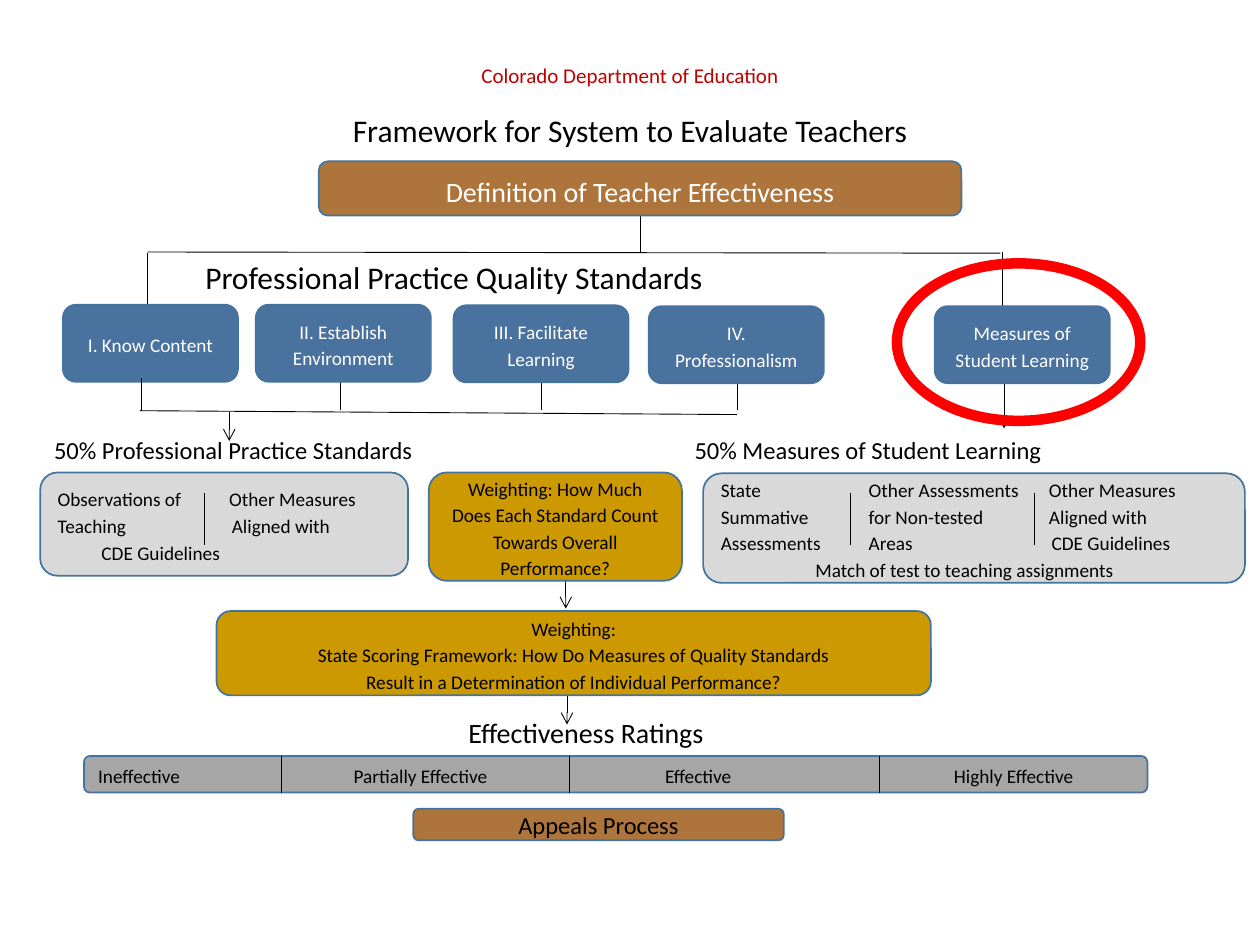
from dataclasses import dataclass

from lxml import etree
from pptx import Presentation
from pptx.dml.color import RGBColor
from pptx.enum.shapes import MSO_CONNECTOR, MSO_SHAPE
from pptx.enum.text import MSO_ANCHOR, MSO_AUTO_SIZE, PP_ALIGN
from pptx.oxml.ns import qn
from pptx.util import Pt

LEFT, CENTER = PP_ALIGN.LEFT, PP_ALIGN.CENTER
TOP, MIDDLE = MSO_ANCHOR.TOP, MSO_ANCHOR.MIDDLE
ROUNDED, ELLIPSE = MSO_SHAPE.ROUNDED_RECTANGLE, MSO_SHAPE.OVAL
STRAIGHT = MSO_CONNECTOR.STRAIGHT
NO_AUTOFIT = MSO_AUTO_SIZE.NONE

FONT = "Calibri"
BLACK, WHITE, RED, DARK_RED = "000000", "FFFFFF", "FF0000", "C00000"
BROWN, BLUE, GOLD = "AD743B", "4A729E", "CC9900"
LIGHT_GRAY, GRAY, OUTLINE = "D9D9D9", "A6A6A6", "43739E"


@dataclass
class Panel:
    """A rounded box; each line may carry its own tab stops."""
    left: float
    top: float
    width: float
    height: float
    fill: str
    lines: list[str]
    tabs: list[list[float]] | None = None
    size: float = 11
    color: str = BLACK
    align: PP_ALIGN = CENTER
    spacing: float = 1.15


@dataclass
class Link:
    x1: float
    y1: float
    x2: float
    y2: float
    arrow: bool = False


def rgb(value: str) -> RGBColor:
    return RGBColor.from_string(value)


def add_text(frame, text: str, *, size: float, color: str = BLACK,
             align: PP_ALIGN = LEFT, spacing: float = 1.0, after: float = 0,
             tabs: list[float] | None = None, new: bool = False) -> None:
    para = frame.add_paragraph() if new else frame.paragraphs[0]
    para.alignment = align
    para.line_spacing = spacing
    para.space_before = Pt(0)
    para.space_after = Pt(after)
    if tabs:
        stops = etree.SubElement(para._p.get_or_add_pPr(), qn("a:tabLst"))
        for stop in tabs:
            etree.SubElement(stops, qn("a:tab"), pos=str(int(Pt(stop))), algn="l")
    span = para.add_run()
    span.text = text
    span.font.name = FONT
    span.font.size = Pt(size)
    span.font.color.rgb = rgb(color)


def add_panel(slide, panel: Panel) -> None:
    box = slide.shapes.add_shape(ROUNDED, Pt(panel.left), Pt(panel.top),
                                 Pt(panel.width), Pt(panel.height))
    box.shadow.inherit = False
    box.fill.solid()
    box.fill.fore_color.rgb = rgb(panel.fill)
    box.line.color.rgb = rgb(OUTLINE)
    box.line.width = Pt(1)
    frame = box.text_frame
    frame.word_wrap = True
    frame.vertical_anchor = MIDDLE
    for index, line in enumerate(panel.lines):
        add_text(frame, line, size=panel.size, color=panel.color,
                 align=panel.align, spacing=panel.spacing,
                 tabs=panel.tabs[index] if panel.tabs else None, new=index > 0)


def add_link(slide, link: Link) -> None:
    line = slide.shapes.add_connector(STRAIGHT, Pt(link.x1), Pt(link.y1),
                                      Pt(link.x2), Pt(link.y2))
    line.line.color.rgb = rgb(BLACK)
    line.line.width = Pt(0.5)
    if link.arrow:
        etree.SubElement(line.line._get_or_add_ln(), qn("a:tailEnd"), type="arrow")
    etree.SubElement(line._element.spPr, qn("a:effectLst"))


def add_label(slide, text: str, left: float, top: float, width: float,
              height: float, size: float, tabs: list[float] | None = None) -> None:
    box = slide.shapes.add_textbox(Pt(left), Pt(top), Pt(width), Pt(height))
    box.text_frame.word_wrap = tabs is not None
    add_text(box.text_frame, text, size=size, tabs=tabs)


def add_heading(slide) -> None:
    title = slide.shapes.title
    title.left, title.top, title.width, title.height = Pt(180), Pt(30.2), Pt(360), Pt(59)
    frame = title.text_frame
    frame.word_wrap = True
    frame.auto_size = NO_AUTOFIT
    frame.vertical_anchor = TOP
    add_text(frame, "Colorado Department of Education", size=12, color=DARK_RED,
             align=CENTER, spacing=1.15, after=10)
    add_text(frame, "Framework for System to Evaluate Teachers", size=18,
             align=CENTER, spacing=1.15, new=True)


def add_highlight(slide) -> None:
    ring = slide.shapes.add_shape(ELLIPSE, Pt(512.6), Pt(150.5), Pt(139), Pt(90))
    ring.shadow.inherit = False
    ring.fill.background()
    ring.line.color.rgb = rgb(RED)
    ring.line.width = Pt(6)


TREE_LINKS = [
    Link(84.2, 144, 571.7, 144.7),
    Link(84.2, 144.7, 84.2, 193),
    Link(573.1, 144, 573.1, 190.8),
    Link(365.8, 123.1, 365.8, 144.7),
    Link(79.9, 234.7, 421.2, 236.9),
    *[Link(x, 215, x, 234.5) for x in (194.4, 309.6, 421.2)],
    Link(573.8, 208, 573.8, 244.8, arrow=True),
    Link(131, 235.4, 131, 252, arrow=True),
    Link(323.3, 331.9, 323.3, 347.8, arrow=True),
    Link(324, 397.4, 324, 414, arrow=True),
]
DIVIDERS = [
    Link(80.6, 216, 80.6, 234.7),
    *[Link(x, 281.5, x, 311.5) for x in (116.6, 486, 591.1)],
    *[Link(x, 432, x, 452.9) for x in (160.6, 325.4, 502.6)],
]
STANDARDS = [
    (36, 174.2, "I. Know Content"),
    (146.2, 174.2, "II. Establish Environment"),
    (259.2, 174.5, "III. Facilitate Learning"),
    (370.8, 175, "IV. Professionalism"),
    (534.2, 175, "Measures of Student Learning"),
]
PANELS = [
    Panel(182.2, 92.2, 367.2, 31, BROWN, ["Definition of Teacher Effectiveness"],
          size=16, color=WHITE),
    *[Panel(left, top, 100, 44, BLUE, [name], color=WHITE)
      for left, top, name in STANDARDS],
    Panel(245, 270, 144.7, 61.9, GOLD,
          ["Weighting: How Much Does Each Standard Count Towards Overall Performance?"]),
    Panel(23, 270, 210.2, 59, LIGHT_GRAY,
          ["Observations of\tOther Measures", "Teaching\tAligned with", "\tCDE Guidelines"],
          tabs=[[98], [99.5], [25]], align=LEFT),
    Panel(401.8, 270.5, 309.6, 62.6, LIGHT_GRAY,
          ["State\tOther Assessments\tOther Measures",
           "Summative\tfor Non-tested\tAligned with",
           "Assessments\tAreas\tCDE Guidelines",
           "\tMatch of test to teaching assignments"],
          tabs=[[84.5, 187.5], [84.5, 187.5], [84.5, 189], [54]], align=LEFT),
    Panel(123.8, 349.2, 408.2, 48.2, GOLD,
          ["Weighting:",
           "State Scoring Framework: How Do Measures of Quality Standards",
           "Result in a Determination of Individual Performance?"]),
    Panel(48, 432, 607.7, 20.9, GRAY,
          ["Ineffective\tPartially Effective\tEffective\tHighly Effective"],
          tabs=[[146, 324, 489]], align=LEFT),
    Panel(236.2, 462.2, 211.7, 18, BROWN, ["Appeals Process"], size=14, spacing=1.0),
]


def main() -> None:
    deck = Presentation()
    deck.slide_width, deck.slide_height = Pt(720), Pt(540)
    slide = deck.slides.add_slide(deck.slide_layouts[5])
    add_heading(slide)
    for link in TREE_LINKS:
        add_link(slide, link)
    for panel in PANELS:
        add_panel(slide, panel)
    for divider in DIVIDERS:
        add_link(slide, divider)
    add_label(slide, "Professional Practice Quality Standards", 110.2, 144, 301.7, 29, 18)
    add_label(slide, "50% Professional Practice Standards\t50% Measures of Student Learning",
              23.8, 245, 679, 25, 14, tabs=[366])
    add_label(slide, "Effectiveness Ratings", 260.6, 405.4, 151.2, 26.6, 16)
    add_highlight(slide)
    deck.save("out.pptx")


if __name__ == "__main__":
    main()
